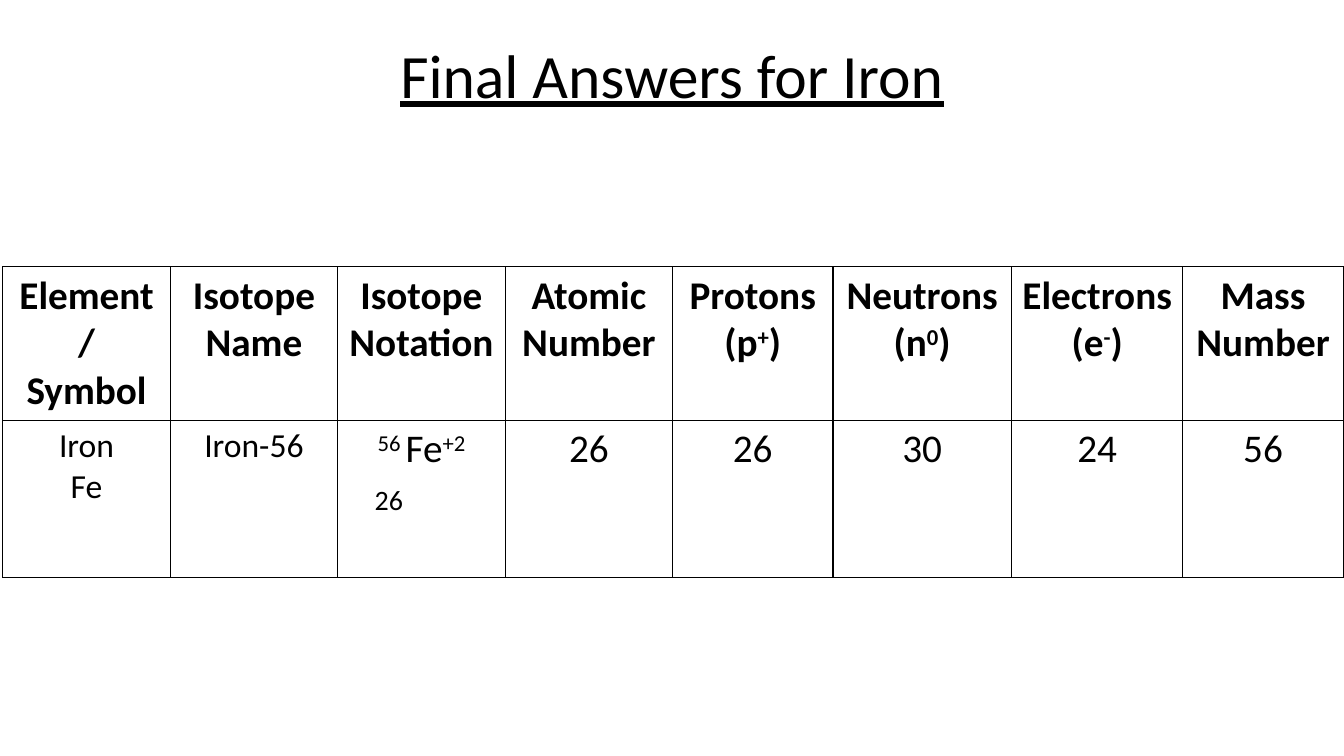
from pptx import Presentation
from pptx.dml.color import RGBColor
from pptx.enum.text import MSO_ANCHOR as Anchor, PP_ALIGN as Align
from pptx.oxml.ns import qn
from pptx.util import Cm, Pt
from lxml.etree import SubElement

BLACK = RGBColor(0, 0, 0)
FONT = "Calibri"
SUPERSCRIPT = "30000"
COLUMN_WIDTHS = [4.22, 4.22, 4.22, 4.22, 4.04, 4.5, 4.32, 4.04]
ROW_HEIGHTS = [3.8, 3.96]
HEADERS = [
    ["Element/", "Symbol"],
    ["Isotope Name"],
    ["Isotope Notation"],
    ["Atomic Number"],
    ["Protons", ("(p", "+", ")")],
    ["Neutrons", ("(n", "0", ")")],
    ["Electrons", ("(e", "-", ")")],
    ["Mass Number"],
]
NAMES = [["Iron", "Fe"], ["Iron-56"]]
COUNTS = [["26"], ["26"], ["30"], ["24"], ["56"]]


def add_run(paragraph, text, size, bold=False, raised=False):
    run = paragraph.add_run()
    run.text = text
    font = run.font
    font.name, font.size, font.bold = FONT, Pt(size), bold
    font.color.rgb = BLACK
    if raised:
        font._element.set("baseline", SUPERSCRIPT)
    return run


def add_line(text_frame, index, align=Align.CENTER):
    paragraph = text_frame.add_paragraph() if index else text_frame.paragraphs[0]
    paragraph.alignment = align
    return paragraph


def write_lines(cell, lines, size, bold=False):
    for index, line in enumerate(lines):
        paragraph = add_line(cell.text_frame, index)
        parts = [line] if isinstance(line, str) else line
        for position, part in enumerate(parts):
            add_run(paragraph, part, size, bold, raised=position == 1)


def write_notation(cell):
    upper = add_line(cell.text_frame, 0)
    add_run(upper, "56 ", 28, raised=True)
    add_run(upper, "Fe", 28)
    add_run(upper, "+2", 28, raised=True)
    lower = add_line(cell.text_frame, 1, Align.LEFT)
    lower.space_before = Pt(7.5)
    properties = lower._p.get_or_add_pPr()
    properties.set("marL", str(Cm(0.68)))
    properties.set("indent", "0")
    add_run(lower, "26", 20)


def style_cell(cell):
    properties = cell._tc.get_or_add_tcPr()
    for side in ("a:lnL", "a:lnR", "a:lnT", "a:lnB"):
        border = SubElement(properties, qn(side), w=str(Pt(1)))
        fill = SubElement(border, qn("a:solidFill"))
        SubElement(fill, qn("a:srgbClr"), val=str(BLACK))
    cell.fill.background()


def add_title(slide, left, top, width, height):
    text_frame = slide.shapes.add_textbox(left, top, width, height).text_frame
    text_frame.word_wrap = True
    text_frame.vertical_anchor = Anchor.TOP
    paragraph = add_line(text_frame, 0)
    paragraph.line_spacing = 0.9
    add_run(paragraph, "Final Answers for Iron", 44).font.underline = True


def add_isotope_table(slide, left, top, width, height):
    table = slide.shapes.add_table(
        len(ROW_HEIGHTS), len(COLUMN_WIDTHS), left, top, width, height).table
    table.first_row = table.horz_banding = False
    for column, size in zip(table.columns, COLUMN_WIDTHS):
        column.width = Cm(size)
    for row, size in zip(table.rows, ROW_HEIGHTS):
        row.height = Cm(size)
    for cell in table.iter_cells():
        style_cell(cell)
    for column, lines in enumerate(HEADERS):
        write_lines(table.cell(0, column), lines, 28, bold=True)
    for column, lines in enumerate(NAMES):
        write_lines(table.cell(1, column), lines, 24)
    write_notation(table.cell(1, len(NAMES)))
    for column, lines in enumerate(COUNTS, len(NAMES) + 1):
        write_lines(table.cell(1, column), lines, 28)


def main():
    presentation = Presentation()
    presentation.slide_width, presentation.slide_height = Cm(33.87), Cm(19.05)
    slide = presentation.slides.add_slide(presentation.slide_layouts[6])
    add_isotope_table(slide, Cm(0.07), Cm(6.72),
                      Cm(sum(COLUMN_WIDTHS)), Cm(sum(ROW_HEIGHTS)))
    add_title(slide, Cm(2.33), Cm(1.01), Cm(29.21), Cm(3.68))
    presentation.save("out.pptx")


if __name__ == "__main__":
    main()
